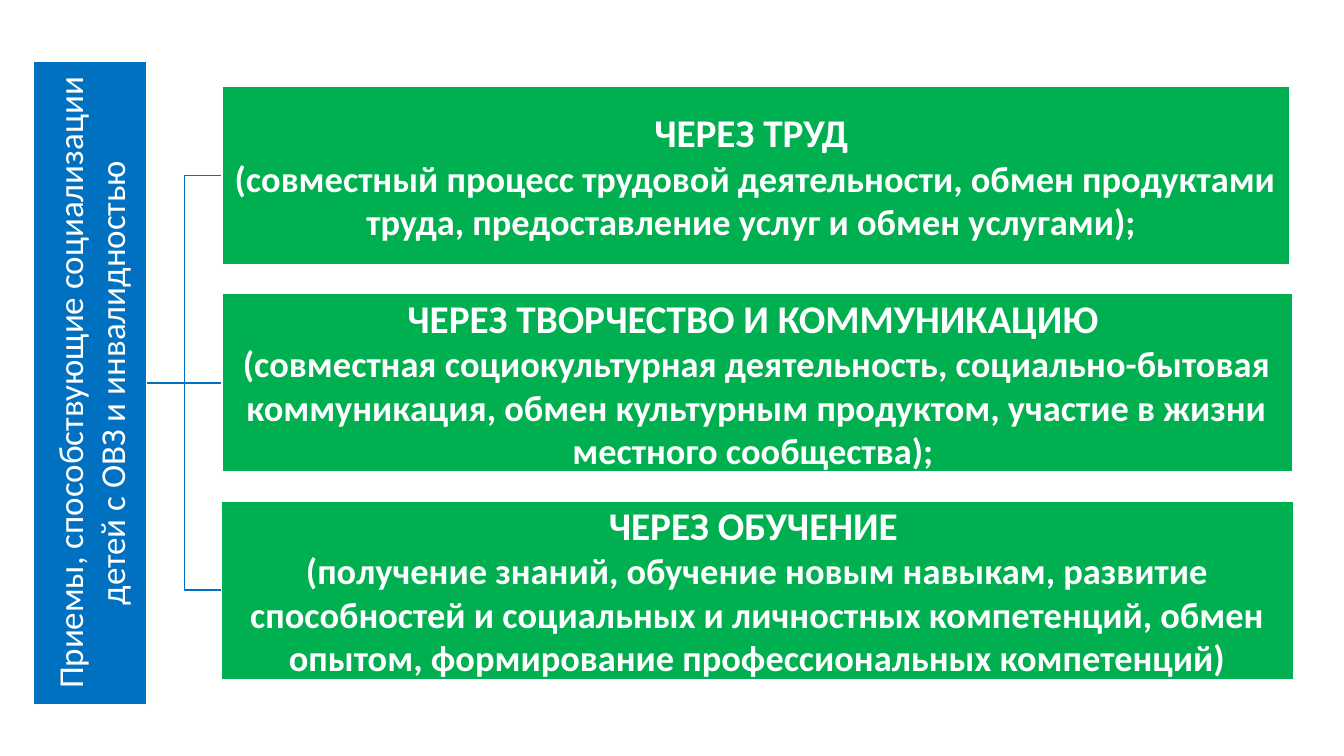
from lxml import etree
from pptx import Presentation
from pptx import util as u
from pptx.dml.color import RGBColor
from pptx.enum import shapes, text
from pptx.oxml.ns import qn

COLORS = {"topic": "0070C0", "way": "00B050", "white": "FFFFFF"}
TOPIC = "Приемы, способствующие социализации детей с ОВЗ и инвалидностью"
WAYS = [
    ("ЧЕРЕЗ ТРУД ",
     "(совместный процесс трудовой деятельности, обмен продуктами труда, "
     "предоставление услуг и обмен услугами); ", 10.59),
    ("ЧЕРЕЗ ТВОРЧЕСТВО И КОММУНИКАЦИЮ ",
     "(совместная социокультурная деятельность, социально-бытовая коммуникация, "
     "обмен культурным продуктом, участие в жизни местного сообщества); ", 10.62),
    ("ЧЕРЕЗ ОБУЧЕНИЕ ",
     "(получение знаний, обучение новым навыкам, развитие способностей и социальных "
     "и личностных компетенций, обмен опытом, формирование профессиональных компетенций)", 10.63),
]

# Grid in inches
MIDDLE = 3.8
ROW_PITCH = 2.055
WAY_LEFT, WAY_HEIGHT = 2.2, 1.77
TOPIC_LENGTH, TOPIC_THICKNESS = 6.39, 1.13
TOPIC_RIGHT = 1.46


def rgb(name):
    return RGBColor.from_string(COLORS[name])


def fill_block(block, color, lines, bold):
    """Paint a block and set its (wording, size) lines as centred white paragraphs."""
    block.fill.solid()
    block.fill.fore_color.rgb = rgb(color)
    block.line.color.rgb = rgb("white")
    block.line.width = u.Pt(1)
    frame = block.text_frame
    frame.word_wrap = True
    frame.auto_size = text.MSO_AUTO_SIZE.NONE
    frame.vertical_anchor = text.MSO_ANCHOR.MIDDLE
    frame.margin_left = frame.margin_right = u.Inches(0.02)
    frame.margin_top = frame.margin_bottom = u.Inches(0.02)
    frame.text = "\n".join(wording for wording, size in lines)
    for paragraph, (wording, size) in zip(frame.paragraphs, lines):
        paragraph.alignment = text.PP_ALIGN.CENTER
        paragraph.font.name = "Calibri"
        paragraph.font.size = u.Pt(size)
        paragraph.font.bold = bold
        paragraph.font.color.rgb = rgb("white")


deck = Presentation()
deck.slide_width, deck.slide_height = u.Inches(13.33), u.Inches(7.5)
slide = deck.slides.add_slide(deck.slide_layouts.get_by_name("Title Only"))

# The topic is laid out horizontally around its centre, then turned upright
topic = slide.shapes.title
topic.left = u.Inches(TOPIC_RIGHT - TOPIC_THICKNESS / 2 - TOPIC_LENGTH / 2)
topic.top = u.Inches(MIDDLE - TOPIC_THICKNESS / 2)
topic.width, topic.height = u.Inches(TOPIC_LENGTH), u.Inches(TOPIC_THICKNESS)
topic.rotation = 270
fill_block(topic, "topic", [(TOPIC, 25)], bold=False)

for row, (heading, details, width) in enumerate(WAYS):
    center = MIDDLE + (row - 1) * ROW_PITCH

    kind = shapes.MSO_CONNECTOR.STRAIGHT if center == MIDDLE else shapes.MSO_CONNECTOR.ELBOW
    branch = slide.shapes.add_connector(
        kind, u.Inches(TOPIC_RIGHT), u.Inches(MIDDLE), u.Inches(WAY_LEFT), u.Inches(center))
    branch.line.color.rgb = rgb("topic")
    branch.line.width = u.Pt(1)
    etree.SubElement(branch._element.spPr, qn("a:effectLst"))

    way = slide.shapes.add_shape(
        shapes.MSO_SHAPE.RECTANGLE, u.Inches(WAY_LEFT), u.Inches(center - WAY_HEIGHT / 2),
        u.Inches(width), u.Inches(WAY_HEIGHT))
    way.shadow.inherit = False
    fill_block(way, "way", [(heading, 28), (details, 26)], bold=True)

deck.save("out.pptx")
